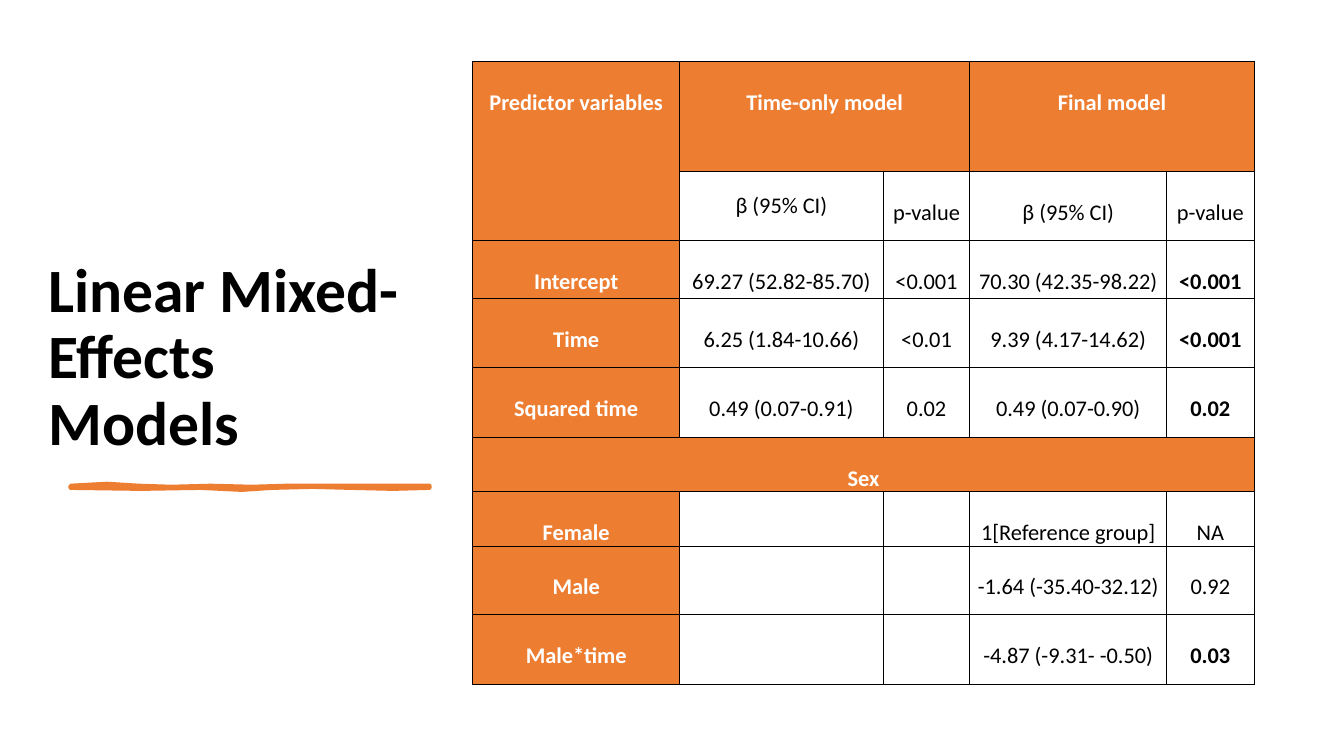
from dataclasses import dataclass

from lxml.etree import SubElement
from pptx import Presentation
from pptx.dml.color import RGBColor
from pptx.enum.text import MSO_ANCHOR, PP_ALIGN
from pptx.oxml.ns import qn
from pptx.util import Inches, Pt

FONT = "Calibri"
COLORS = {"accent": "ED7D31", "ink": "000000", "paper": "FFFFFF"}


@dataclass
class Row:
    height: float
    cells: tuple[str, ...]
    strong: bool = False  # bold p-value in the last column
    head: bool = False  # every cell is a heading


WIDTHS = (2.05, 2.02, 0.86, 1.95, 0.87)
ROWS = (
    Row(1.09, ("Predictor variables", "Time-only model", "", "Final model", ""), head=True),
    Row(0.69, ("", "β (95% CI)", "p-value", "β (95% CI)", "p-value")),
    Row(0.57, ("Intercept", "69.27 (52.82-85.70)", "<0.001", "70.30 (42.35-98.22)", "<0.001"), True),
    Row(0.69, ("Time", "6.25 (1.84-10.66)", "<0.01", "9.39 (4.17-14.62)", "<0.001"), True),
    Row(0.69, ("Squared time", "0.49 (0.07-0.91)", "0.02", "0.49 (0.07-0.90)", "0.02"), True),
    Row(0.54, ("Sex", "", "", "", ""), head=True),
    Row(0.54, ("Female", "", "", "1[Reference group]", "NA")),
    Row(0.68, ("Male", "", "", "-1.64 (-35.40-32.12)", "0.92")),
    Row(0.69, ("Male*time", "", "", "-4.87 (-9.31- -0.50)", "0.03"), True),
)
# Merged areas: first row, first column, last row, last column
SPANS = ((0, 0, 1, 0), (0, 1, 0, 2), (0, 3, 0, 4), (5, 0, 5, 4))

# Outline of the brush stroke under the title
STROKE = (
    (0.7, 4.82), (0.88, 4.81), (1.06, 4.8), (1.22, 4.81), (1.38, 4.82),
    (1.7, 4.83), (2.09, 4.82), (2.5, 4.83), (2.84, 4.82), (3.2, 4.82),
    (3.59, 4.82), (3.9, 4.82), (4.26, 4.82), (4.26, 4.84), (3.9, 4.85),
    (3.48, 4.84), (3.1, 4.83), (2.7, 4.84), (2.4, 4.86), (1.99, 4.84),
    (1.4, 4.85), (0.7, 4.84),
)


def color(name: str) -> RGBColor:
    return RGBColor.from_string(COLORS[name])


def style(para, size: float, tint: str, bold: bool) -> None:
    font = para.font
    font.name, font.size, font.bold = FONT, Pt(size), bold
    font.color.rgb = color(tint)


def border(cell) -> None:
    props = cell._tc.get_or_add_tcPr()
    for pos, side in enumerate(("lnL", "lnR", "lnT", "lnB")):
        line = props.makeelement(qn(f"a:{side}"), {"w": str(Pt(1))})
        fill = SubElement(line, qn("a:solidFill"))
        SubElement(fill, qn("a:srgbClr"), val=COLORS["ink"])
        props.insert(pos, line)


def fill_cell(cell, text: str, head: bool, bold: bool) -> None:
    cell.margin_left = cell.margin_right = Inches(0.03)
    cell.margin_top = cell.margin_bottom = 0
    cell.fill.solid()
    cell.fill.fore_color.rgb = color("accent" if head else "paper")
    border(cell)
    para = cell.text_frame.paragraphs[0]
    para.alignment = PP_ALIGN.CENTER
    style(para, 16, "paper" if head else "ink", bold)
    if text:
        para.line_spacing = 2.0
        para.add_run().text = text


def add_title(slide) -> None:
    box = slide.shapes.add_textbox(Inches(0.38), Inches(3.05), Inches(3.8), Inches(1.55))
    frame = box.text_frame
    frame.word_wrap = True
    frame.vertical_anchor = MSO_ANCHOR.BOTTOM
    para = frame.paragraphs[0]
    para.text = "Linear Mixed-Effects Models"
    para.line_spacing = 0.9
    style(para, 44, "ink", True)


def add_stroke(slide) -> None:
    dots = [(Inches(x), Inches(y)) for x, y in STROKE]
    build = slide.shapes.build_freeform(*dots[0])
    build.add_line_segments(dots[1:], close=True)
    shape = build.convert_to_shape()
    shape.shadow.inherit = False
    shape.fill.solid()
    shape.fill.fore_color.rgb = color("accent")
    shape.line.color.rgb = color("accent")
    shape.line.width = Pt(3)


def add_model(slide) -> None:
    height = sum(row.height for row in ROWS)
    table = slide.shapes.add_table(
        len(ROWS), len(WIDTHS), Inches(4.69), Inches(0.61),
        Inches(sum(WIDTHS)), Inches(height)).table
    table.first_row = table.horz_banding = False
    for col, width in zip(table.columns, WIDTHS):
        col.width = Inches(width)
    for r, row in enumerate(ROWS):
        table.rows[r].height = Inches(row.height)
        for c, text in enumerate(row.cells):
            head = row.head or c == 0
            bold = head or (row.strong and c == len(WIDTHS) - 1)
            fill_cell(table.cell(r, c), text, head, bold)
    for top, left, low, right in SPANS:
        table.cell(top, left).merge(table.cell(low, right))
    # The first β heading sits mid-cell with single spacing
    beta = table.cell(1, 1)
    beta.vertical_anchor = MSO_ANCHOR.MIDDLE
    beta.text_frame.paragraphs[0].line_spacing = 1.0


def main() -> None:
    deck = Presentation()
    deck.slide_width, deck.slide_height = Inches(13.33), Inches(7.5)
    slide = deck.slides.add_slide(deck.slide_layouts[6])
    add_title(slide)
    add_stroke(slide)
    add_model(slide)
    deck.save("out.pptx")


if __name__ == "__main__":
    main()
